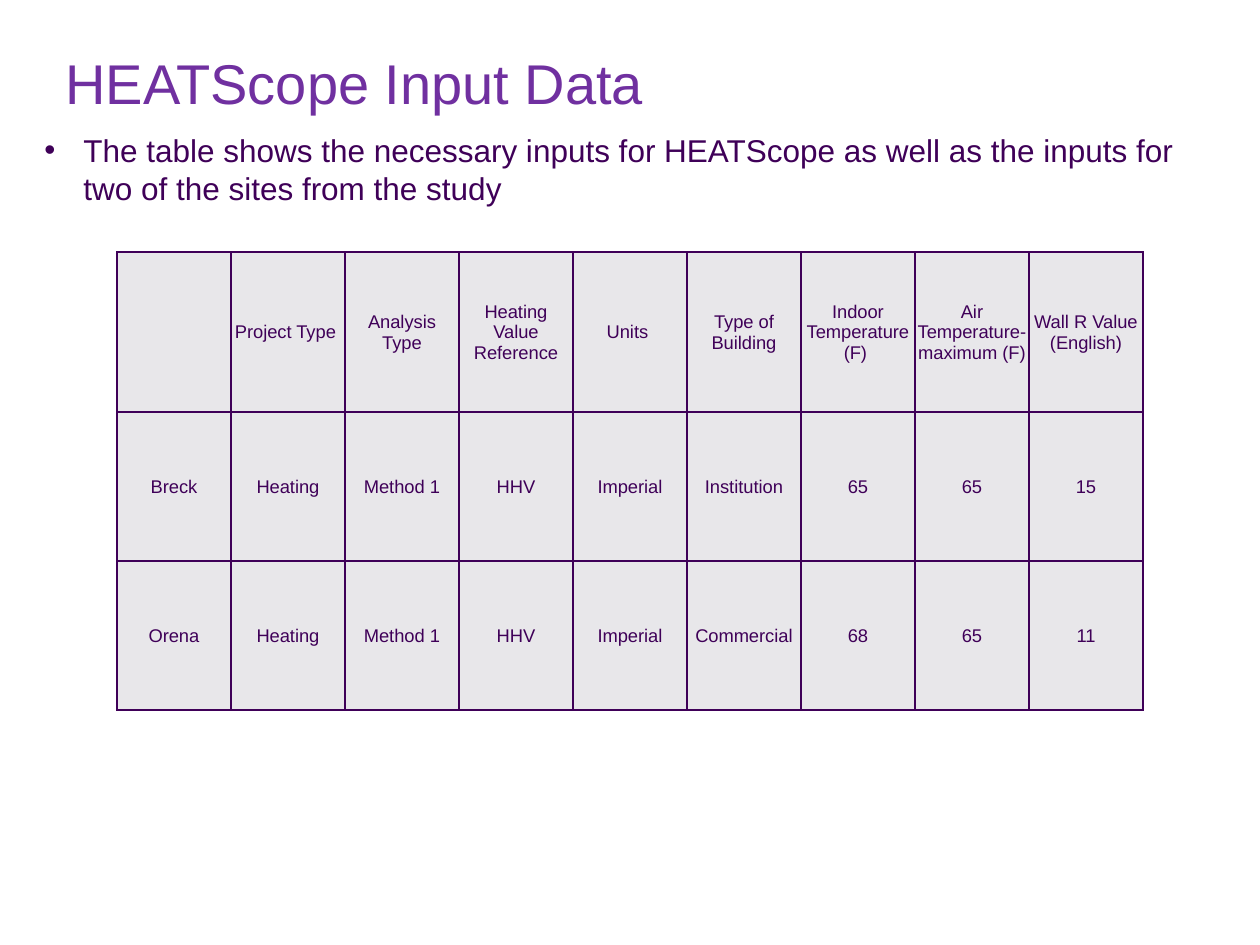
from lxml.etree import SubElement
from pptx import Presentation
from pptx.dml.color import RGBColor as Color
from pptx.enum.text import MSO_ANCHOR as Anchor, PP_ALIGN as Align
from pptx.oxml.ns import qn
from pptx.util import Pt

EMU_PER_PX = 914400 // 126
COLORS = {"title": "7030A0", "ink": "3F0058", "cell": "E8E7EA"}
FONT = "Arial"


def px(length):
    return length * EMU_PER_PX


class SlideBuilder:
    def __init__(self, page):
        self.page = page

    def add_span(self, para, text, size, color):
        span = para.add_run()
        span.text = text
        span.font.name = FONT
        span.font.size = Pt(size)
        span.font.color.rgb = Color.from_string(COLORS[color])

    def text(self, left, top, width, height, text, size, color, hang=0):
        box = self.page.shapes.add_textbox(px(left), px(top), px(width), px(height))
        box.text_frame.word_wrap = True
        para = box.text_frame.paragraphs[0]
        if hang:
            props = para._p.get_or_add_pPr()
            props.set("marL", str(px(hang)))
            props.set("indent", str(-px(hang)))
            SubElement(props, qn("a:buFont"), typeface=FONT)
            SubElement(props, qn("a:buChar"), char="•")
        self.add_span(para, text, size, color)

    def borders(self, cell, color, width):
        props = cell._tc.get_or_add_tcPr()
        for side in ("lnL", "lnR", "lnT", "lnB"):
            line = SubElement(props, qn(f"a:{side}"), w=str(Pt(width)))
            fill = SubElement(line, qn("a:solidFill"))
            SubElement(fill, qn("a:srgbClr"), val=COLORS[color])

    def table(self, left, top, column_width, row_heights, rows, size):
        columns = len(rows[0])
        frame = self.page.shapes.add_table(
            len(rows), columns, px(left), px(top),
            px(column_width * columns), px(sum(row_heights)))
        table = frame.table
        table.first_row = table.horz_banding = False
        for column in table.columns:
            column.width = px(column_width)
        for row, height in zip(table.rows, row_heights):
            row.height = px(height)
        for cell, text in zip(table.iter_cells(), sum(rows, [])):
            self.borders(cell, "ink", 1)
            cell.fill.solid()
            cell.fill.fore_color.rgb = Color.from_string(COLORS["cell"])
            cell.vertical_anchor = Anchor.MIDDLE
            cell.margin_left = cell.margin_right = cell.margin_top = px(1)
            cell.margin_bottom = 0
            para = cell.text_frame.paragraphs[0]
            para.alignment = Align.CENTER
            if text:
                self.add_span(para, text, size, "ink")


def main():
    deck = Presentation()
    deck.slide_width, deck.slide_height = px(1260), px(945)
    slide = SlideBuilder(deck.slides.add_slide(deck.slide_layouts[6]))

    # Title and introduction
    slide.text(53, 42, 1081, 81, "HEATScope Input Data", 32, "title")
    slide.text(32, 125, 1197, 89,
               "The table shows the necessary inputs for HEATScope as well as "
               "the inputs for two of the sites from the study",
               18, "ink", hang=39)

    # Inputs for each site
    shared = ["Heating", "Method 1", "HHV", "Imperial"]
    rows = [
        ["", "Project Type ", "Analysis Type", "Heating Value Reference",
         "Units ", "Type of Building", "Indoor Temperature (F) ",
         "Air Temperature-maximum (F)", "Wall R Value (English)"],
        ["Breck", *shared, "Institution", "65", "65", "15"],
        ["Orena", *shared, "Commercial", "68", "65", "11"],
    ]
    slide.table(117, 252, 114, [160, 149, 149], rows, 10.5)

    deck.save("out.pptx")


if __name__ == "__main__":
    main()
